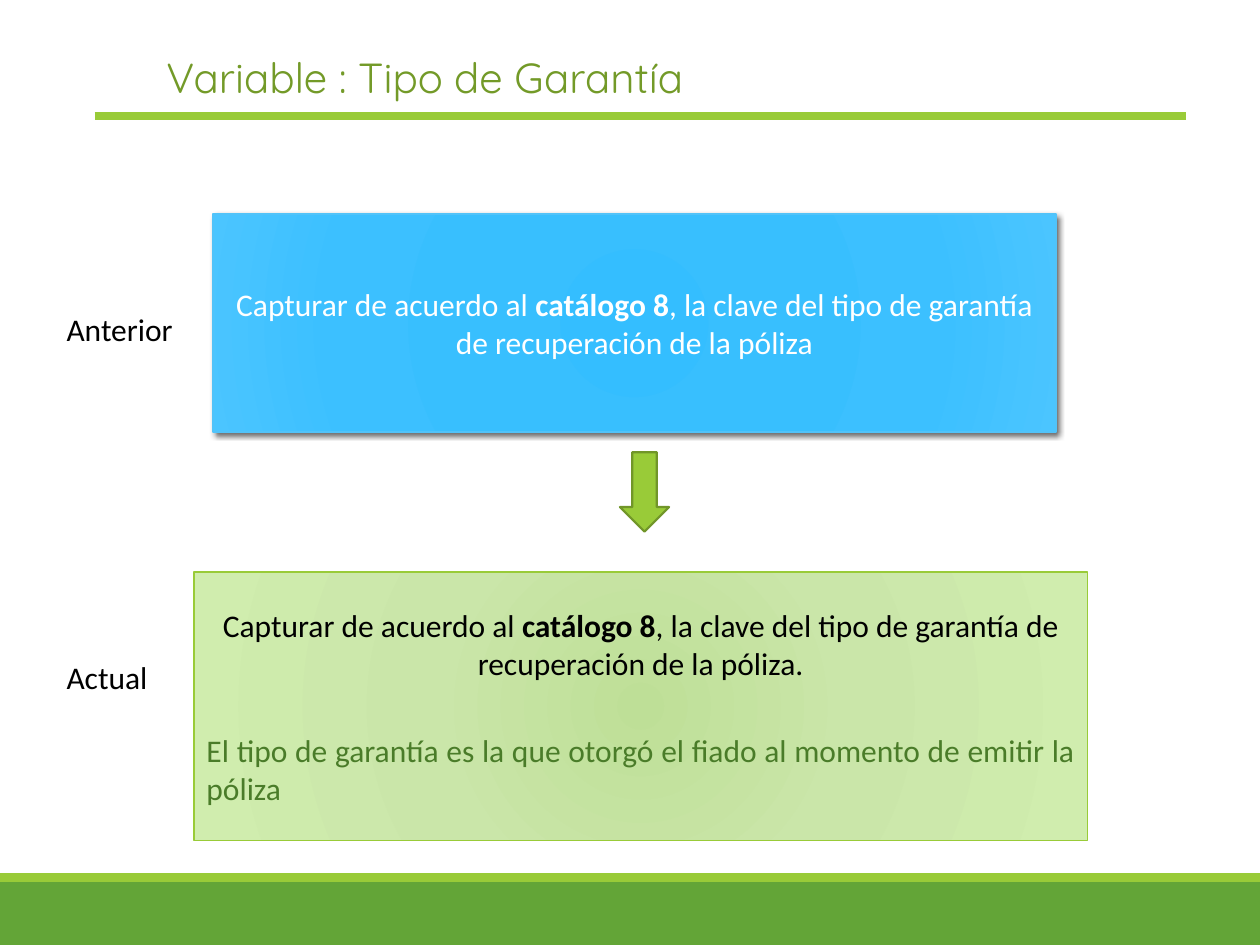
from pptx import Presentation, util as u
from pptx.dml.color import RGBColor
from pptx.enum import shapes, text
from pptx.oxml import parse_xml
from pptx.oxml.ns import nsdecls, qn

TITLE = "Variable : Tipo de Garantía"
RULE = (0.75, 0.92, 9.41, 0.92)
LABELS = [("Anterior", 2.41), ("Actual", 5.17)]
BANDS = [("63A537", 7, 0.5), ("99CB38", 6.93, 0.07)]
LEAD = "Capturar de acuerdo al "
CATALOGUE = "catálogo 8"
CLAUSE = ", la clave del tipo de garantía de recuperación de la póliza"
NOTE = "El tipo de garantía es la que otorgó el fiado al momento de emitir la póliza"
CENTER, JUSTIFY = text.PP_ALIGN.CENTER, text.PP_ALIGN.JUSTIFY
RULES = [
    {
        "at": (1.54, 4.54, 7.09, 2.13),
        "stops": [(0, "BEDF97"), (45, "CAE6A9"), (100, "D0EDAE")],
        "line": "99CB38",
        "shadow": False,
        "paragraphs": [
            ([(LEAD, False), (CATALOGUE, True), (CLAUSE + ".", False)],
             "000000", {"alignment": CENTER}),
            ([(NOTE, False)], "4A7C29",
             {"alignment": JUSTIFY, "space_before": u.Pt(28)}),
        ],
    },
    {
        "at": (1.69, 1.7, 6.69, 1.73),
        "stops": [(0, "34BEFF"), (34, "38BFFE"), (70, "3CC0FF"), (100, "4BC5FF")],
        "line": "51C3F9",
        "shadow": True,
        "paragraphs": [
            ([(LEAD, False), (CATALOGUE, True), (CLAUSE, False)],
             "FFFFFF", {"alignment": CENTER}),
        ],
    },
]


def paint(color_format, value):
    color_format.rgb = RGBColor.from_string(value)


def apply(target, formats):
    for name, value in formats.items():
        setattr(target, name, value)


def inches(values):
    return [u.Inches(value) for value in values]


def write(paragraph, runs, color, size=18, font="Calibri", **formats):
    apply(paragraph, formats)
    for words, bold in runs:
        run = paragraph.add_run()
        run.text = words
        apply(run.font, {"name": font, "size": u.Pt(size), "bold": bold})
        paint(run.font.color, color)


def add_block(slide, preset, at, fill=None, line=None, width=1):
    block = slide.shapes.add_shape(preset, *inches(at))
    block.shadow.inherit = False
    if fill:
        block.fill.solid()
        paint(block.fill.fore_color, fill)
    else:
        block.fill.background()
    if line:
        paint(block.line.color, line)
        block.line.width = u.Pt(width)
    else:
        block.line.fill.background()
    return block


def fill_radially(block, stops):
    stop_xml = "".join(
        f'<a:gs pos="{pos * 1000}"><a:srgbClr val="{color}"/></a:gs>'
        for pos, color in stops)
    gradient = parse_xml(
        f'<a:gradFill {nsdecls("a")} rotWithShape="1"><a:gsLst>{stop_xml}</a:gsLst>'
        '<a:path path="circle"><a:fillToRect l="100000" t="100000" '
        'r="100000" b="100000"/></a:path></a:gradFill>')
    properties = block._element.spPr
    properties.replace(properties.find(qn("a:noFill")), gradient)


def cast_shadow(block):
    block._element.spPr.find(qn("a:effectLst")).append(parse_xml(
        f'<a:outerShdw {nsdecls("a")} blurRad="{u.Pt(3)}" dist="{u.Pt(2)}" '
        'dir="2700000" algn="tl" rotWithShape="0"><a:srgbClr val="000000">'
        '<a:alpha val="60000"/></a:srgbClr></a:outerShdw>'))


def add_rule_box(slide, rule):
    box = add_block(slide, shapes.MSO_SHAPE.FLOWCHART_PROCESS, rule["at"],
                    line=rule["line"])
    fill_radially(box, rule["stops"])
    if rule["shadow"]:
        cast_shadow(box)
    frame = box.text_frame
    apply(frame, {"word_wrap": True, "vertical_anchor": text.MSO_ANCHOR.MIDDLE})
    for index, (runs, color, formats) in enumerate(rule["paragraphs"]):
        paragraph = frame.add_paragraph() if index else frame.paragraphs[0]
        write(paragraph, runs, color, **formats)


def main():
    deck = Presentation()
    apply(deck, {"slide_width": u.Inches(10), "slide_height": u.Inches(7.5)})
    slide = deck.slides.add_slide(deck.slide_layouts[5])

    for color, top, height in BANDS:
        add_block(slide, shapes.MSO_SHAPE.RECTANGLE, (0, top, 10, height), color)

    underline = slide.shapes.add_connector(
        shapes.MSO_CONNECTOR.STRAIGHT, *inches(RULE))
    paint(underline.line.color, "99CB38")
    underline.line.width = u.Pt(4.5)
    underline._element.spPr.append(parse_xml(f'<a:effectLst {nsdecls("a")}/>'))

    title = slide.shapes.title
    apply(title, dict(zip(("left", "top", "width", "height"),
                          inches((1.22, 0.36, 5.12, 0.5)))))
    apply(title.text_frame, {"word_wrap": True,
                             "auto_size": text.MSO_AUTO_SIZE.NONE,
                             "vertical_anchor": text.MSO_ANCHOR.TOP})
    write(title.text_frame.paragraphs[0], [(TITLE, False)], "739A28",
          size=24, font="Quicksand", alignment=JUSTIFY)

    for label, top in LABELS:
        frame = slide.shapes.add_textbox(*inches((0.43, top, 1.26, 0.4))).text_frame
        frame.word_wrap = True
        write(frame.paragraphs[0], [(label, False)], "000000")

    for rule in RULES:
        add_rule_box(slide, rule)

    add_block(slide, shapes.MSO_SHAPE.DOWN_ARROW, (4.92, 3.59, 0.39, 0.63),
              "99CB38", "719629", 1.25)
    deck.save("out.pptx")


if __name__ == "__main__":
    main()
